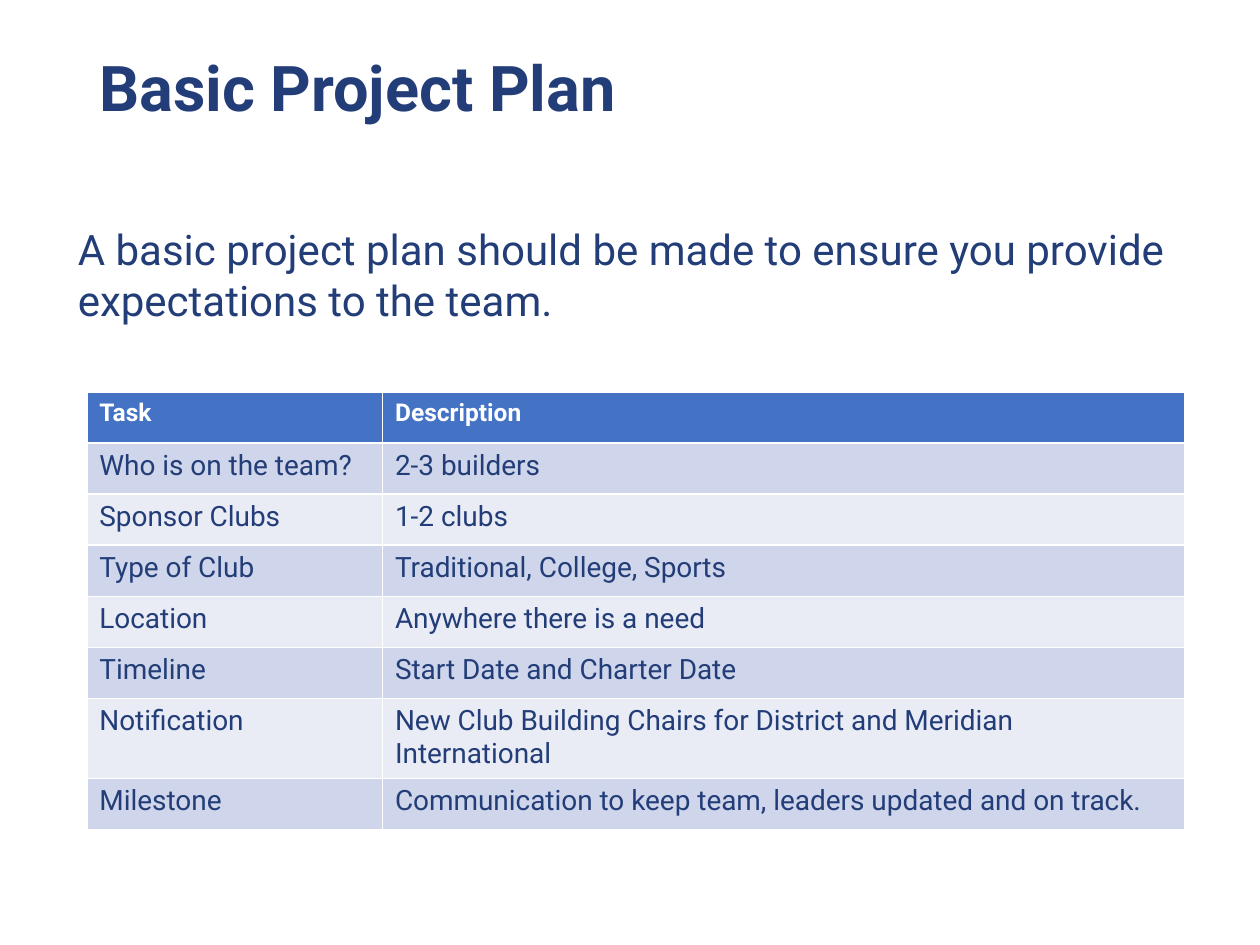
from pptx import Presentation
from pptx import util as u
from pptx.dml.color import RGBColor
from pptx.enum import text

COLORS = {"navy": "223D77", "header": "4472C4", "band": "CFD5EA", "light": "E9EBF5", "white": "FFFFFF"}


def set_font(paragraph, color, **values):
    for key, value in {"name": "Roboto", "bold": False, **values}.items():
        setattr(paragraph.font, key, value)
    paragraph.font.color.rgb = RGBColor.from_string(COLORS[color])


def add_text(slide, place, words):
    frame = slide.shapes.add_textbox(*map(u.Cm, place)).text_frame
    frame.word_wrap = True
    frame.vertical_anchor = text.MSO_ANCHOR.TOP
    frame.text = words
    return frame.paragraphs[0]


deck = Presentation()
deck.slide_width, deck.slide_height = u.Cm(25.4), u.Cm(19.05)
slide = deck.slides.add_slide(deck.slide_layouts[6])

intro = add_text(slide, (1.32, 4.39, 23.14, 3.3),
                 "A basic project plan should be made to ensure you provide expectations to the team.")
intro.line_spacing = u.Pt(28.8)
set_font(intro, "navy", size=u.Pt(24))

title = add_text(slide, (1.75, 1.02, 21.89, 3.68), "Basic Project Plan")
title.line_spacing = 0.9
set_font(title, "navy", size=u.Pt(36), bold=True)

plan_rows = [
    ("Task", "Description"),
    ("Who is on the team?", "2-3 builders"),
    ("Sponsor Clubs", "1-2 clubs"),
    ("Type of Club", "Traditional, College, Sports"),
    ("Location", "Anywhere there is a need"),
    ("Timeline", "Start Date and Charter Date"),
    ("Notification", "New Club Building Chairs for District and Meridian International"),
    ("Milestone", "Communication to keep team, leaders updated and on track."),
]
column_widths = (5.96, 16.17)
row_height = 1.03

plan = slide.shapes.add_table(
    len(plan_rows), len(column_widths), u.Cm(1.75), u.Cm(7.9),
    u.Cm(sum(column_widths)), u.Cm(row_height * len(plan_rows))).table
for column, width in zip(plan.columns, column_widths):
    column.width = u.Cm(width)

for r, row in enumerate(plan_rows):
    plan.rows[r].height = u.Cm(row_height)
    fill = "header" if r == 0 else ("light", "band")[r % 2]
    for c, words in enumerate(row):
        cell = plan.cell(r, c)
        cell.text = words
        cell.fill.solid()
        cell.fill.fore_color.rgb = RGBColor.from_string(COLORS[fill])
        if r == 0:
            set_font(cell.text_frame.paragraphs[0], "white", size=u.Pt(14), bold=True)
        else:
            set_font(cell.text_frame.paragraphs[0], "navy", size=u.Pt(16))

deck.save("out.pptx")
